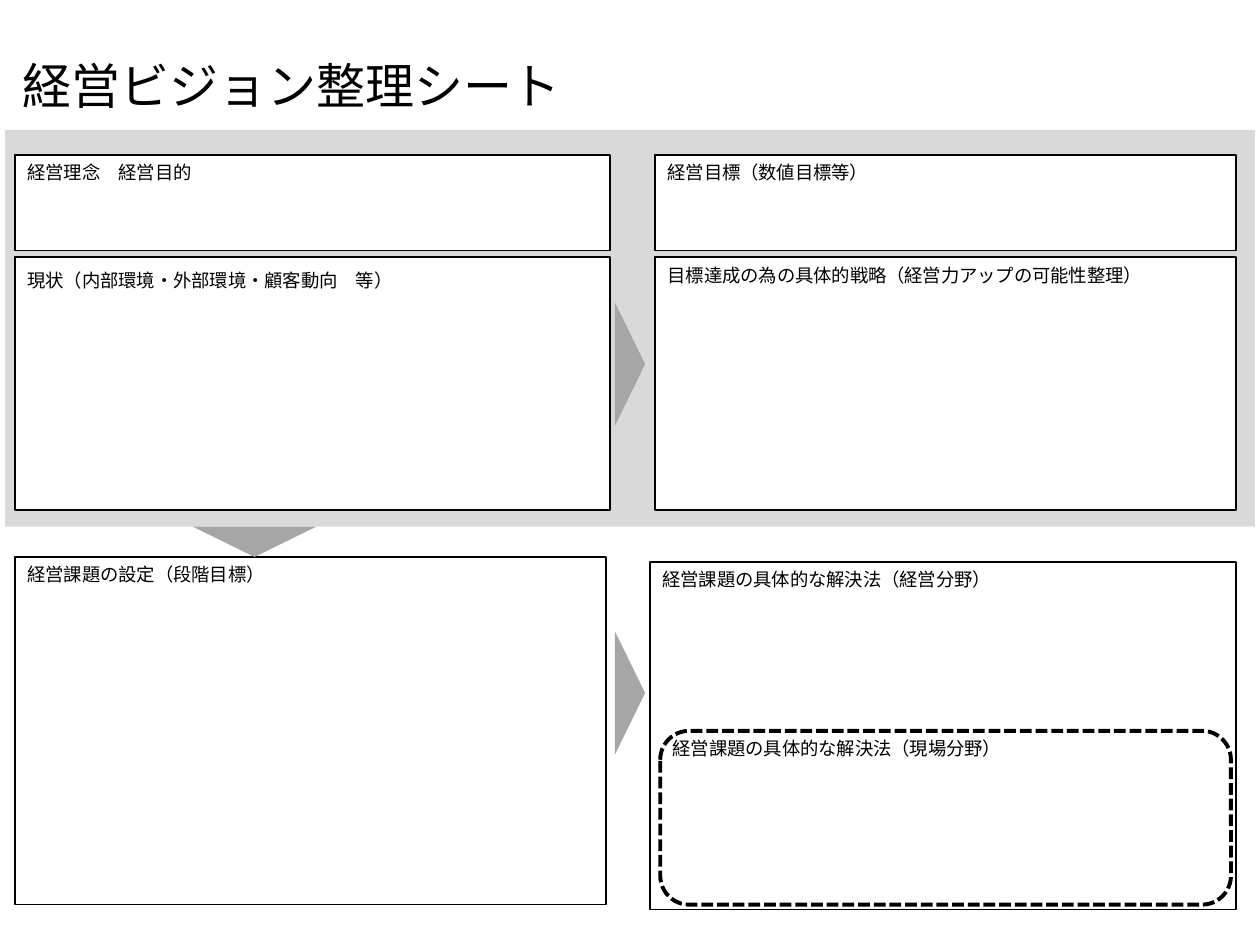
from pptx import Presentation
from pptx.dml.color import RGBColor
from pptx.enum.dml import MSO_LINE
from pptx.enum.shapes import MSO_SHAPE
from pptx.enum.text import MSO_ANCHOR, MSO_AUTO_SIZE, PP_ALIGN
from pptx.oxml.ns import qn
from pptx.util import Pt
from lxml import etree

RECTANGLE = MSO_SHAPE.RECTANGLE
ROUNDED = MSO_SHAPE.ROUNDED_RECTANGLE
TRIANGLE = MSO_SHAPE.ISOSCELES_TRIANGLE
SHORT_DASH = MSO_LINE.SQUARE_DOT
LEFT = PP_ALIGN.LEFT
TOP, MIDDLE = MSO_ANCHOR.TOP, MSO_ANCHOR.MIDDLE
NO_FIT, GROW = MSO_AUTO_SIZE.NONE, MSO_AUTO_SIZE.SHAPE_TO_FIT_TEXT
TITLE_ONLY = 5


def color(value):
    return RGBColor.from_string(value)


def write(frame, text, size, font, ink, anchor=TOP, fit=GROW, line_spacing=None):
    """Put one formatted paragraph into a text frame."""
    frame.word_wrap = True
    frame.auto_size = fit
    frame.vertical_anchor = anchor
    para = frame.paragraphs[0]
    para.alignment = LEFT
    para.line_spacing = line_spacing
    span = para.add_run()
    span.text = text
    span.font.size = Pt(size)
    span.font.color.rgb = color(ink)
    span.font.name = font
    # Japanese glyphs take the East Asian typeface
    east_asian = etree.SubElement(span.font._element, qn("a:ea"))
    east_asian.set("typeface", font)


class Sheet:
    """Style of the planning sheet and the page being filled."""

    font = "Noto Sans CJK JP"
    ink, paper, band_fill, arrow_fill = "000000", "FFFFFF", "D9D9D9", "A6A6A6"
    title_size, label_size, label_height = 28, 10.5, 20.16
    arrow_base, arrow_depth = 70.56, 17.28

    def __init__(self, page):
        self.page = page

    def title(self, text, left, top, width, height):
        box = self.page.shapes.title
        box.left, box.top, box.width, box.height = map(Pt, (left, top, width, height))
        write(box.text_frame, text, self.title_size, self.font, self.ink,
              anchor=MIDDLE, fit=NO_FIT, line_spacing=0.9)

    def shape(self, kind, left, top, width, height, fill=None, line=None, dash=None):
        box = self.page.shapes.add_shape(kind, *map(Pt, (left, top, width, height)))
        box.shadow.inherit = False
        if fill:
            box.fill.solid()
            box.fill.fore_color.rgb = color(fill)
        else:
            box.fill.background()
        if line:
            box.line.color.rgb = color(self.ink)
            box.line.width = Pt(line)
            box.line.dash_style = dash
        else:
            box.line.fill.background()
        return box

    def label(self, text, left, top, width):
        box = self.page.shapes.add_textbox(
            *map(Pt, (left, top, width, self.label_height)))
        write(box.text_frame, text, self.label_size, self.font, self.ink)

    def panel(self, text, left, top, width, height, label_width, label_drop=0):
        self.shape(RECTANGLE, left, top, width, height, fill=self.paper, line=1)
        self.label(text, left, top + label_drop, label_width)

    def arrow(self, center_x, center_y, rotation):
        box = self.shape(TRIANGLE, center_x - self.arrow_base / 2,
                         center_y - self.arrow_depth / 2,
                         self.arrow_base, self.arrow_depth, fill=self.arrow_fill)
        box.rotation = rotation


def main():
    deck = Presentation()
    deck.slide_width, deck.slide_height = Pt(720), Pt(540)
    sheet = Sheet(deck.slides.add_slide(deck.slide_layouts[TITLE_ONLY]))
    sheet.title("経営ビジョン整理シート", 5.76, 28.8, 620.64, 43.92)

    # Grey band behind the upper four panels
    sheet.shape(RECTANGLE, 2.88, 74.16, 714.24, 226.8, fill=sheet.band_fill)

    # Upper panels: two columns by two rows
    columns = [(8.64, 339.84), (374.4, 331.92)]
    rows = [(88.56, 54.72), (146.88, 144.72)]
    upper = [
        [("経営理念　経営目的", 117.36, 0), ("経営目標（数値目標等）", 148.32, 0)],
        [("現状（内部環境・外部環境・顧客動向　等）", 235.44, 3.6),
         ("目標達成の為の具体的戦略（経営力アップの可能性整理）", 322.56, 0.72)],
    ]
    for (top, height), cells in zip(rows, upper):
        for (left, width), (text, label_width, drop) in zip(columns, cells):
            sheet.panel(text, left, top, width, height, label_width, drop)

    # Lower panels
    label_width = 209.52
    sheet.panel("経営課題の設定（段階目標）", 8.64, 318.24, 337.68, 198.72, label_width)
    sheet.panel("経営課題の具体的な解決法（経営分野）",
                371.52, 321.12, 334.8, 198.72, label_width)

    # Dashed area for solutions on site
    sheet.shape(ROUNDED, 377.28, 417.6, 326.16, 99.36, line=2.25, dash=SHORT_DASH)
    sheet.label("経営課題の具体的な解決法（現場分野）", 377.28, 417.6, label_width)

    # Arrows: two to the right, one down
    for center_x, center_y, rotation in [(360, 208.08, 90), (360, 396, 90),
                                         (145.44, 309.6, 180)]:
        sheet.arrow(center_x, center_y, rotation)

    deck.save("out.pptx")


if __name__ == "__main__":
    main()
